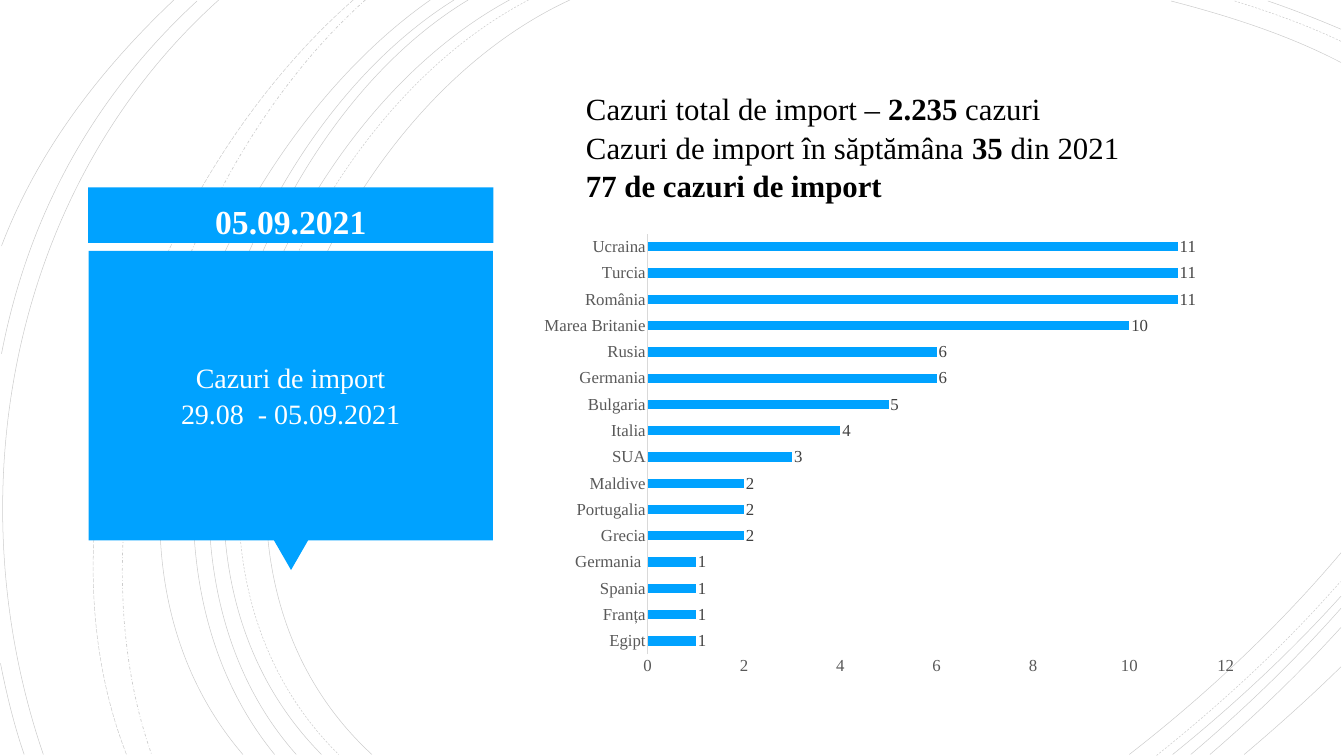
import pptx
import pptx.chart.data
import pptx.dml.color
import pptx.enum.chart
import pptx.enum.dml
import pptx.enum.shapes
import pptx.enum.text
import pptx.oxml
import pptx.oxml.ns
import pptx.util

Cm, Pt = pptx.util.Cm, pptx.util.Pt
RGB = pptx.dml.color.RGBColor.from_string
DASH = pptx.enum.dml.MSO_LINE
SHAPE = pptx.enum.shapes.MSO_SHAPE
ALIGN = pptx.enum.text.PP_ALIGN
ANCHOR = pptx.enum.text.MSO_ANCHOR
XL = pptx.enum.chart
qn = pptx.oxml.ns.qn
INCH = 2.54

THEME = {
    "font": "Times New Roman",
    "accent": RGB("00A2FF"), "white": RGB("FFFFFF"), "black": RGB("000000"),
    "axis_text": RGB("595959"), "axis_line": RGB("D9D9D9"), "label": RGB("404040"),
    "date": Pt(48), "summary": Pt(44), "title": Pt(40), "chart": Pt(24),
}


def box(*inches):
    return [Cm(v * INCH) for v in inches]


def style(font, size, color, bold=False):
    fmt = {"name": THEME["font"], "size": THEME[size], "bold": bold}
    for key, value in fmt.items():
        setattr(font, key, value)
    font.color.rgb = THEME[color]


prs = pptx.Presentation()
prs.slide_width, prs.slide_height = box(26.67, 15)
s = prs.slides.add_slide(prs.slide_layouts[6])

curves = [
    ((11.31, 0), (6.3, 2.3), (2.86, 10.8), (7.38, 14.97), DASH.SOLID),
    ((26.61, 1.24), (25.56, 0.69), (24.36, 0.31), (23.24, 0.02), DASH.SOLID),
    ((22.41, 14.97), (23.93, 13.79), (25.37, 12.44), (26.61, 10.97), DASH.SOLID),
    ((10.49, 0), (5.69, 2.49), (2.45, 10.75), (6.72, 14.97), DASH.DASH),
    ((26.61, 0.82), (25.94, 0.5), (25.21, 0.24), (24.5, 0.02), DASH.DASH),
    ((22.95, 14.99), (24.25, 13.95), (25.5, 12.8), (26.6, 11.54), DASH.DASH),
    ((10.11, 0), (5.39, 2.55), (2.19, 10.74), (6.38, 14.97), DASH.SOLID),
    ((26.61, 0.58), (26.14, 0.38), (25.66, 0.19), (25.16, 0.02), DASH.SOLID),
    ((23.27, 14.97), (24.46, 14.01), (25.59, 12.96), (26.61, 11.83), DASH.SOLID),
    ((9.29, 0), (4.87, 2.66), (2.19, 10.82), (5.88, 14.97), DASH.SOLID),
    ((23.63, 14.97), (24.68, 14.08), (25.69, 13.11), (26.61, 12.07), DASH.SOLID),
    ((9.01, 0), (4.61, 2.75), (1.94, 10.67), (5.45, 14.97), DASH.SOLID),
    ((24.01, 14.97), (24.93, 14.18), (25.8, 13.34), (26.61, 12.45), DASH.SOLID),
    ((8.54, 0), (4.34, 2.93), (1.06, 10.58), (4.82, 14.97), DASH.SOLID),
    ((24.69, 14.97), (25.34, 14.42), (25.99, 13.84), (26.61, 13.23), DASH.SOLID),
    ((7.25, 0), (3.52, 3.33), (1.31, 10.18), (3.01, 14.97), DASH.DASH_DOT),
    ((7.01, 0), (3.15, 3.38), (0.57, 9.98), (2.51, 14.97), DASH.LONG_DASH),
    ((4.34, 0), (0.22, 3.7), (-0.91, 9.8), (0.86, 14.97), DASH.SOLID),
    ((3.91, 0.02), (1.85, 1.92), (0.56, 4.27), (0.03, 7.02), DASH.SOLID),
    ((0.01, 13.16), (0.13, 13.77), (0.28, 14.39), (0.48, 14.97), DASH.SOLID),
    ((3.45, 0), (1.99, 1.38), (0.75, 2.99), (0.03, 4.88), DASH.SOLID),
]
for start, *points, dash in curves:
    fb = s.shapes.build_freeform(*box(*start))
    fb.add_line_segments([box(*pt) for pt in points], close=False)
    sp = fb.convert_to_shape()
    sp.shadow.inherit = False
    sp.fill.background()
    sp.line.color.rgb = THEME["black"]
    sp.line.width = Pt(1 if dash == DASH.DASH_DOT else 0.75)
    sp.line.dash_style = dash
    color = next(sp._element.spPr.iter(qn("a:srgbClr")))
    color.append(pptx.oxml.parse_xml(
        f'<a:alpha {pptx.oxml.ns.nsdecls("a")} val="20000"/>'))
    segments = list(sp._element.iter(qn("a:lnTo")))
    bezier = pptx.oxml.parse_xml(f'<a:cubicBezTo {pptx.oxml.ns.nsdecls("a")}/>')
    segments[0].addprevious(bezier)
    for segment in segments:
        bezier.append(segment[0])
        segment.getparent().remove(segment)

panels = [
    (SHAPE.RECTANGLE, (1.75, 3.72, 8.04, 1.1), 0),
    (SHAPE.ISOSCELES_TRIANGLE, (5.43, 10.71, 0.69, 0.6), 180),
    (SHAPE.RECTANGLE, (1.76, 4.98, 8.02, 5.74), 0),
]
for kind, at, rotation in panels:
    sp = s.shapes.add_shape(kind, *box(*at))
    sp.shadow.inherit = False
    sp.rotation = rotation
    sp.fill.solid()
    sp.fill.fore_color.rgb = THEME["accent"]
    sp.line.fill.background()

texts = [
    ((1.94, 5.14, 7.65, 5.37), "title", "white", ALIGN.CENTER, ANCHOR.MIDDLE,
     [[("Cazuri de import", False)], [("29.08  - 05.09.2021", False)]]),
    ((11.53, 1.69, 12.01, 2.32), "summary", "black", ALIGN.LEFT, ANCHOR.TOP,
     [[("Cazuri total de import – ", False), ("2.235 ", True), ("cazuri", False)],
      [("Cazuri de import în săptămâna ", False), ("35 ", True), ("din 2021", False)],
      [("77 de cazuri de import", True)]]),
    ((3.22, 3.9, 5.1, 0.91), "date", "white", ALIGN.CENTER, ANCHOR.TOP,
     [[("05.09.2021", True)]]),
]
for at, size, color, align, anchor, lines in texts:
    tf = s.shapes.add_textbox(*box(*at)).text_frame
    tf.word_wrap = True
    tf.vertical_anchor = anchor
    for i, line in enumerate(lines):
        p = tf.add_paragraph() if i else tf.paragraphs[0]
        p.alignment = align
        p.line_spacing = 1.05
        for text, bold in line:
            r = p.add_run()
            r.text = text
            style(r.font, size, color, bold)

cases = [
    ("Egipt", 1), ("Franța", 1), ("Spania", 1), ("Germania ", 1),
    ("Grecia", 2), ("Portugalia", 2), ("Maldive", 2), ("SUA", 3),
    ("Italia", 4), ("Bulgaria", 5), ("Germania", 6), ("Rusia", 6),
    ("Marea Britanie", 10), ("România", 11), ("Turcia", 11), ("Ucraina", 11),
]
data = pptx.chart.data.CategoryChartData()
data.categories = [country for country, count in cases]
data.add_series("Series 1", [count for country, count in cases])
chart = s.shapes.add_chart(
    XL.XL_CHART_TYPE.BAR_CLUSTERED, *box(10.8, 4.19, 14.25, 9.3), data).chart
chart.has_legend = False
chart.has_title = False
style(chart.font, "chart", "black")

plot = chart.plots[0]
plot.gap_width = 182
plot.vary_by_categories = False
fill = plot.series[0].format.fill
fill.solid()
fill.fore_color.rgb = THEME["accent"]
plot.has_data_labels = True
labels = plot.data_labels
labels.show_value = True
labels.position = XL.XL_LABEL_POSITION.OUTSIDE_END
style(labels.font, "chart", "label")

for axis in (chart.category_axis, chart.value_axis):
    axis.has_major_gridlines = False
    axis.major_tick_mark = axis.minor_tick_mark = XL.XL_TICK_MARK.NONE
    style(axis.tick_labels.font, "chart", "axis_text")
chart.category_axis.format.line.color.rgb = THEME["axis_line"]
chart.category_axis.format.line.width = Pt(0.75)
chart.value_axis.format.line.fill.background()
for key, value in {"minimum_scale": 0, "maximum_scale": 12, "major_unit": 2}.items():
    setattr(chart.value_axis, key, value)

area = chart._chartSpace.chart.plotArea
for old in area.findall(qn("c:layout")):
    area.remove(old)
layout = {"layoutTarget": "inner", "xMode": "edge", "yMode": "edge",
          "x": 0.144, "y": 0.048, "w": 0.805, "h": 0.897}
items = "".join(f'<c:{key} val="{value}"/>' for key, value in layout.items())
area.insert(0, pptx.oxml.parse_xml(
    f'<c:layout {pptx.oxml.ns.nsdecls("c")}><c:manualLayout>{items}'
    '</c:manualLayout></c:layout>'))

prs.save("out.pptx")
